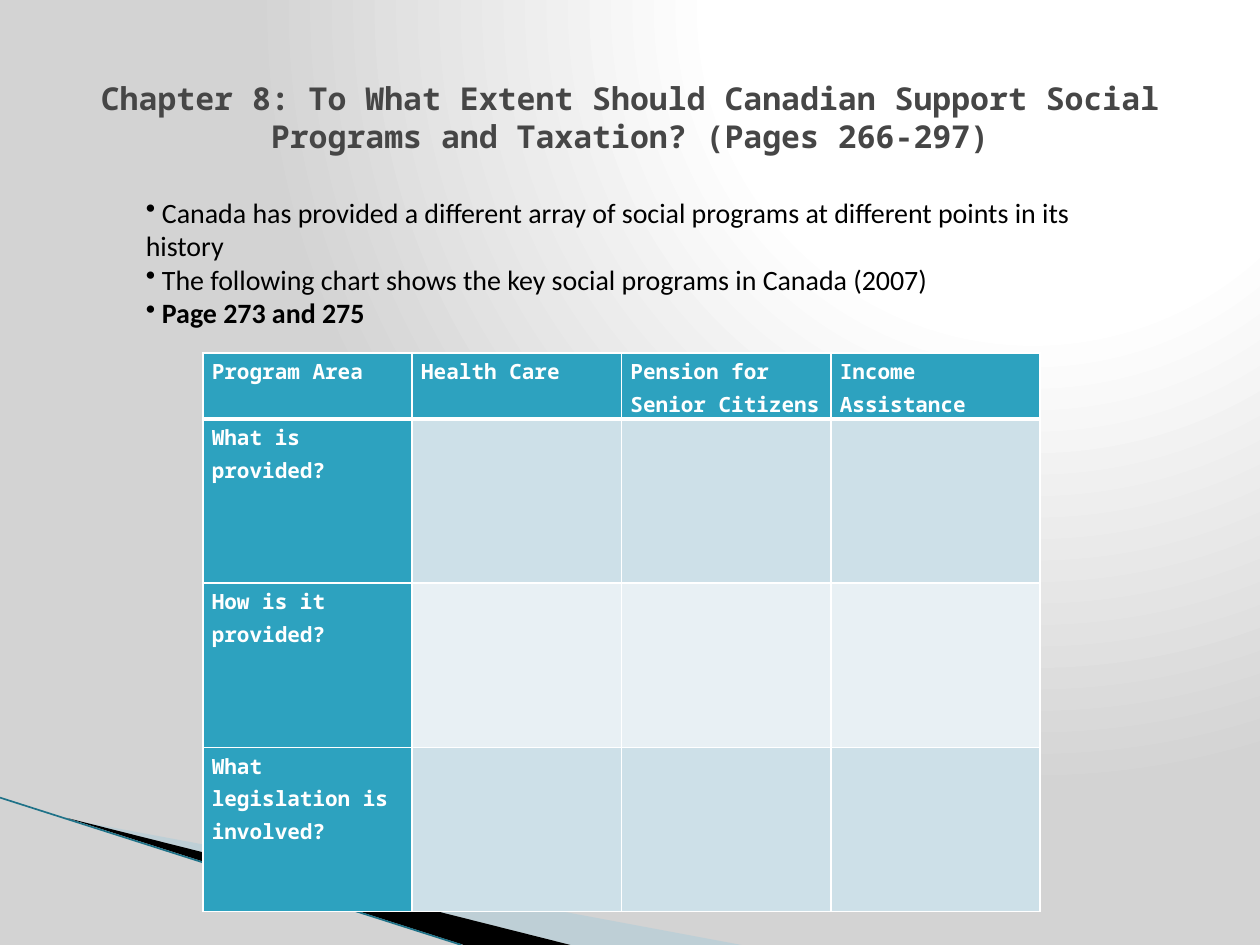
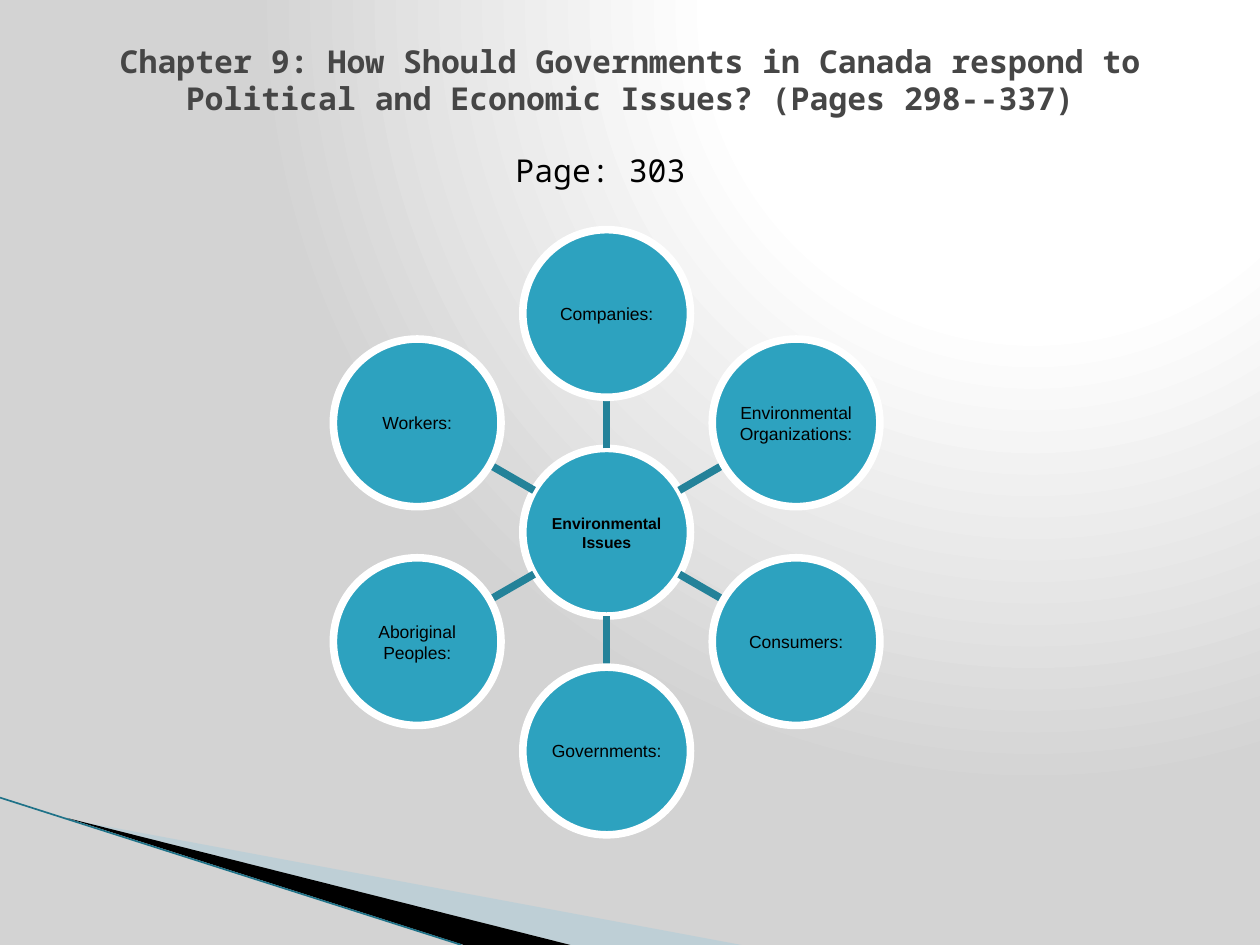
from dataclasses import dataclass
from math import cos, radians, sin
from typing import NamedTuple

from lxml.etree import SubElement
from pptx import Presentation
from pptx.dml.color import RGBColor
from pptx.enum.shapes import MSO_CONNECTOR as Connector, MSO_SHAPE as Preset
from pptx.enum.text import MSO_ANCHOR as Anchor, MSO_AUTO_SIZE as AutoSize, PP_ALIGN as Align
from pptx.oxml import parse_xml
from pptx.oxml.ns import nsdecls, qn
from pptx.util import Cm, Pt


class Box(NamedTuple):
    left: float
    top: float
    width: float
    height: float

    def lengths(self):
        return [Cm(length) for length in self]


@dataclass(frozen=True)
class Theme:
    white: str = "FFFFFF"
    edge_grey: str = "D3D3D3"
    black: str = "000000"
    title_grey: str = "464646"
    teal: str = "2DA2BF"
    spoke_teal: str = "248299"
    sweep_line: str = "1F7288"
    pale_blue: str = "A0CBDC"
    row_tints: tuple = ("CDE0E8", "E8F0F4")
    mono: str = "Noto Sans Mono"
    body: str = "Calibri"
    diagram: str = "Arial"
    title_size: float = 18
    body_size: float = 16
    table_size: float = 12
    node_size: float = 10
    hub_size: float = 9
    ring_line: float = 4.33


THEME = Theme()
TITLE_BOX = Box(1.27, 0.76, 22.86, 3.18)
SWEEP_BOX = Box(0, 16.08, 14.95, 2.97)


def add_run(para, text, font, size, color, bold=False):
    span = para.add_run()
    span.text = text
    span.font.name = font
    span.font.size = Pt(size)
    span.font.bold = bold
    span.font.color.rgb = RGBColor.from_string(color)


def paint(fill, color):
    fill.solid()
    fill.fore_color.rgb = RGBColor.from_string(color)


def add_line(shapes, start, end, color, width):
    ends = [Cm(length) for length in (*start, *end)]
    line = shapes.add_connector(Connector.STRAIGHT, *ends)
    line.line.color.rgb = RGBColor.from_string(color)
    line.line.width = Pt(width)
    SubElement(line.element.spPr, qn("a:effectLst"))
    return line


def add_wedge(page, box, points, color):
    corners = [(Cm(box.left + x), Cm(box.top + y)) for x, y in points]
    builder = page.shapes.build_freeform(*corners[0])
    builder.add_line_segments(corners[1:], close=True)
    wedge = builder.convert_to_shape()
    wedge.shadow.inherit = False
    paint(wedge.fill, color)
    wedge.line.fill.background()
    return wedge


def set_background(master):
    master.background.fill.solid()
    properties = master.element.find(".//" + qn("p:bgPr"))
    stops = ((0, THEME.white), (40, THEME.white), (100, THEME.edge_grey))
    stop_xml = "".join(
        f'<a:gs pos="{place * 1000}"><a:srgbClr val="{color}"/></a:gs>'
        for place, color in stops
    )
    gradient = parse_xml(
        f'<a:gradFill {nsdecls("a")} rotWithShape="1"><a:gsLst>{stop_xml}</a:gsLst>'
        '<a:path path="circle"><a:fillToRect l="65000" b="98000"/></a:path></a:gradFill>'
    )
    properties.replace(properties[0], gradient)


def move_sweep_to_master(page, master, box):
    pale = add_wedge(page, box, [(1.4, 0.44), (box.width, box.height), (11.5, box.height)],
                     THEME.pale_blue)
    tint = pale.element.spPr.find(qn("a:solidFill"))[0]
    SubElement(tint, qn("a:alpha"), val="40000")
    dark = add_wedge(page, box, [(1.35, 0.41), (11.5, box.height), (9.35, box.height)],
                     THEME.black)
    edge = add_line(page.shapes, (box.left, box.top), (box.left + 9.3, box.top + box.height),
                    THEME.sweep_line, 0.95)
    for number, part in enumerate((pale, dark, edge), start=20):
        part.element.xpath(".//p:cNvPr")[0].set("id", str(number))
        master.shapes.element.append(part.element)


def place_title(page, box, text, top_inset=0.13, bottom_inset=0.13):
    title = page.shapes.title
    title.left, title.top, title.width, title.height = box.lengths()
    frame = title.text_frame
    frame.word_wrap = True
    frame.auto_size = AutoSize.NONE
    frame.vertical_anchor = Anchor.MIDDLE
    frame.margin_top, frame.margin_bottom = Cm(top_inset), Cm(bottom_inset)
    para = frame.paragraphs[0]
    para.alignment = Align.CENTER
    add_run(para, text, THEME.mono, THEME.title_size, THEME.title_grey, True)


def add_bullets(page, box, items):
    frame = page.shapes.add_textbox(*box.lengths()).text_frame
    frame.word_wrap = True
    for index, (text, bold) in enumerate(items):
        para = frame.add_paragraph() if index else frame.paragraphs[0]
        SubElement(para._p.get_or_add_pPr(), qn("a:buChar"), char="•")
        add_run(para, " ", THEME.body, THEME.body_size, THEME.black)
        add_run(para, text, THEME.body, THEME.body_size, THEME.black, bold)


def set_borders(cell, widths):
    properties = cell._tc.get_or_add_tcPr()
    for index, (side, width) in enumerate(zip("LRTB", widths)):
        border = parse_xml(
            f'<a:ln{side} {nsdecls("a")} w="{Pt(width)}"><a:solidFill>'
            f'<a:srgbClr val="{THEME.white}"/></a:solidFill></a:ln{side}>'
        )
        properties.insert(index, border)


def add_program_table(page, box, headings, questions, header_height):
    row_count, column_count = len(questions) + 1, len(headings)
    table = page.shapes.add_table(row_count, column_count, *box.lengths()).table
    for column in table.columns:
        column.width = Cm(box.width / column_count)
    for row in table.rows:
        row.height = Cm((box.height - header_height) / len(questions))
    table.rows[0].height = Cm(header_height)
    labels = {(0, column): text for column, text in enumerate(headings)}
    labels.update({(row, 0): text for row, text in enumerate(questions, start=1)})
    for row in range(row_count):
        for column in range(column_count):
            cell = table.cell(row, column)
            cell.margin_left = cell.margin_right = Cm(0.18)
            cell.margin_top = cell.margin_bottom = 0
            label = labels.get((row, column))
            paint(cell.fill, THEME.teal if label else THEME.row_tints[(row - 1) % 2])
            set_borders(cell, (1, 1, 3 if row == 1 else 1, 3 if row == 0 else 1))
            if label:
                para = cell.text_frame.paragraphs[0]
                para.line_spacing = 1.15
                add_run(para, label, THEME.mono, THEME.table_size, THEME.white, True)


def add_circle(shapes, center, diameter, text, size, bold=False):
    box = Box(center[0] - diameter / 2, center[1] - diameter / 2, diameter, diameter)
    circle = shapes.add_shape(Preset.OVAL, *box.lengths())
    circle.shadow.inherit = False
    paint(circle.fill, THEME.teal)
    circle.line.color.rgb = RGBColor.from_string(THEME.white)
    circle.line.width = Pt(THEME.ring_line)
    frame = circle.text_frame
    frame.word_wrap = True
    frame.vertical_anchor = Anchor.MIDDLE
    frame.margin_left = frame.margin_right = Cm(0.02)
    frame.margin_top = frame.margin_bottom = Cm(0.02)
    para = frame.paragraphs[0]
    para.alignment = Align.CENTER
    add_run(para, text, THEME.diagram, size, THEME.black, bold)


def add_radial_diagram(page, box, hub, nodes):
    shapes = page.shapes.add_group_shape().shapes
    diameter = 3.38
    radius = (box.height - diameter) / 2
    middle = (box.left + box.width / 2, box.top + box.height / 2)

    def point(angle, distance):
        return middle[0] + distance * cos(angle), middle[1] + distance * sin(angle)

    add_circle(shapes, middle, diameter, hub, THEME.hub_size, True)
    for index, node in enumerate(nodes):
        angle = radians(index * 360 / len(nodes) - 90)
        add_line(shapes, point(angle, diameter / 2), point(angle, radius - diameter / 2),
                 THEME.spoke_teal, THEME.ring_line)
        add_circle(shapes, point(angle, radius), diameter, node, THEME.node_size)


def add_page_reference(page, box, text):
    frame = page.shapes.add_textbox(*box.lengths()).text_frame
    frame.word_wrap = True
    para = frame.paragraphs[0]
    para.alignment = Align.CENTER
    add_run(para, text, THEME.mono, THEME.title_size, THEME.black)


def build_programs_page(page):
    place_title(page, TITLE_BOX, "Chapter 8: To What Extent Should Canadian Support Social "
                "Programs and Taxation? (Pages 266-297)")
    add_program_table(
        page, Box(4.09, 7.12, 16.88, 11.25),
        ["Program Area", "Health Care", "Pension for Senior Citizens", "Income Assistance"],
        ["What is provided?", "How is it provided?", "What legislation is involved?"],
        header_height=1.32,
    )
    add_bullets(page, Box(2.69, 3.81, 20.19, 3.02), [
        ("Canada has provided a different array of social programs at different points "
         "in its history", False),
        ("The following chart shows the key social programs in Canada (2007)", False),
        ("Page 273 and 275", True),
    ])


def build_issues_page(page):
    place_title(page, TITLE_BOX, "Chapter 9: How Should Governments in Canada respond to "
                "Political and Economic Issues? (Pages 298--337)", 0, 1.5)
    add_radial_diagram(
        page, Box(6.73, 4.63, 11, 12.2), "Environmental Issues",
        ["Companies:", "Environmental Organizations:", "Consumers:", "Governments:",
         "Aboriginal Peoples:", "Workers:"],
    )
    add_page_reference(page, Box(8.51, 2.92, 7.19, 1.02), "Page: 303")


def main():
    deck = Presentation()
    deck.slide_width, deck.slide_height = Cm(25.4), Cm(19.05)
    title_only = deck.slide_layouts[5]
    programs_page, issues_page = (deck.slides.add_slide(title_only) for _ in range(2))
    set_background(deck.slide_master)
    move_sweep_to_master(programs_page, deck.slide_master, SWEEP_BOX)
    build_programs_page(programs_page)
    build_issues_page(issues_page)
    deck.save("out.pptx")


if __name__ == "__main__":
    main()
